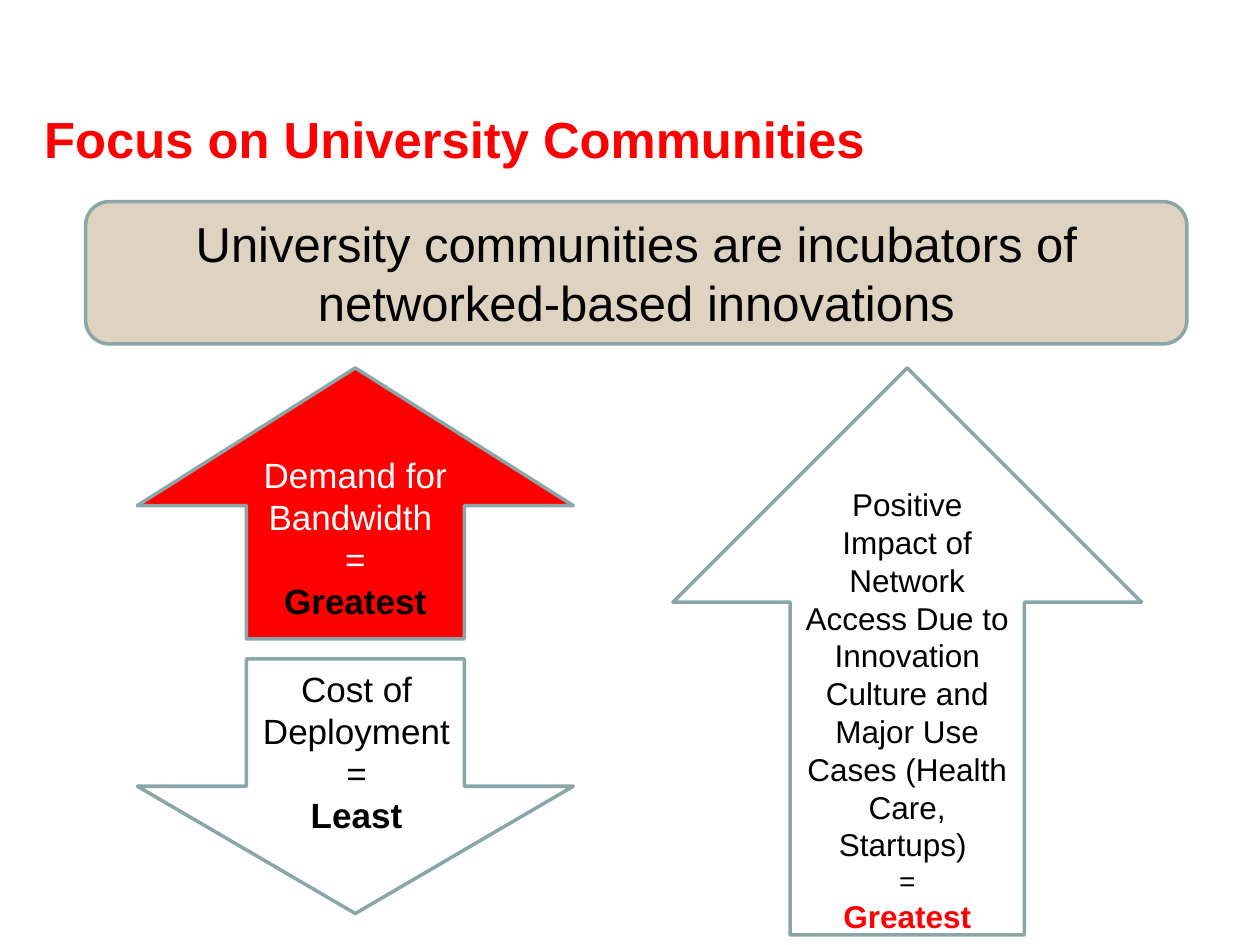
from pptx import Presentation, util as u
from pptx.dml.color import RGBColor
from pptx.enum import shapes, text

COLORS = {"red": "FF0000", "sand": "DED3C0", "edge": "8AA6A8",
          "white": "FFFFFF", "black": "000000"}
FONT = "Arial"
ARROW = shapes.MSO_SHAPE.UP_ARROW


def rgb(name):
    return RGBColor.from_string(COLORS[name])


def inches(box):
    return [u.Inches(v) for v in box]


def write(tf, lines, size, color="black", align=text.PP_ALIGN.CENTER,
          anchor=text.MSO_ANCHOR.MIDDLE):
    """Fill a frame with paragraphs; each line is (text, format overrides)."""
    tf.word_wrap = True
    tf.vertical_anchor = anchor
    for i, (line, fmt) in enumerate(lines):
        p = tf.paragraphs[0] if i == 0 else tf.add_paragraph()
        p.alignment = align
        r = p.add_run()
        r.text = line
        r.font.name = FONT
        r.font.size = u.Pt(fmt.get("size", size))
        r.font.bold = fmt.get("bold", False)
        r.font.color.rgb = rgb(fmt.get("color", color))


def outlined(parent, kind, box, fill):
    sp = parent.add_shape(kind, *inches(box))
    sp.shadow.inherit = False
    sp.fill.solid()
    sp.fill.fore_color.rgb = rgb(fill)
    sp.line.color.rgb = rgb("edge")
    sp.line.width = u.Pt(2)
    return sp


def title(s, box):
    sp = s.shapes.title
    sp.left, sp.top, sp.width, sp.height = inches(box)
    write(sp.text_frame, [("Focus on University Communities", {"bold": True})],
          29, "red", text.PP_ALIGN.LEFT)


def banner(s, box):
    sp = outlined(s.shapes, shapes.MSO_SHAPE.ROUNDED_RECTANGLE, box, "sand")
    write(sp.text_frame, [("University communities are incubators of "
                           "networked-based innovations", {})], 28)


def rising_arrow(s, box, fill, lines, size, color="black", head=0.5):
    sp = outlined(s.shapes, ARROW, box, fill)
    sp.adjustments[1] = head
    write(sp.text_frame, lines, size, color)


def falling_arrow(s, box, lines, size):
    """Inverted arrow grouped with an upright label over its shaft."""
    x, y, w, h = box
    label_w = 1.7
    group = s.shapes.add_group_shape().shapes
    outlined(group, ARROW, box, "white").rotation = 180
    label = group.add_textbox(*inches((x + (w - label_w) / 2 + 0.01, y + 0.02,
                                       label_w, h - 0.02)))
    write(label.text_frame, lines, size, anchor=text.MSO_ANCHOR.TOP)


def main():
    prs = Presentation()
    prs.slide_width, prs.slide_height = u.Inches(10), u.Inches(7.5)
    s = prs.slides.add_slide(prs.slide_layouts[5])

    # Heading and key message
    title(s, (0.25, 0.75, 9.5, 0.7))
    banner(s, (0.68, 1.6, 8.74, 1.13))

    # Left column: demand up, cost down
    left, top, width = 1.09, 2.92, 3.46
    rising_arrow(s, (left, top, width, 2.15), "red",
                 [("Demand for Bandwidth ", {}), ("=", {}),
                  ("Greatest", {"bold": True, "color": "black"})],
                 20, "white", head=0.508)
    falling_arrow(s, (left, 5.23, width, 2.02),
                  [("Cost of Deployment =", {}), ("Least", {"bold": True})], 20)

    # Right column: impact up
    rising_arrow(s, (5.34, top, 3.72, 4.5), "white",
                 [("Positive Impact of Network Access Due to Innovation Culture "
                   "and Major Use Cases (Health Care, Startups) ", {}),
                  ("=", {"size": 16}),
                  ("Greatest", {"bold": True, "color": "red"})], 18)

    prs.save("out.pptx")


if __name__ == "__main__":
    main()
